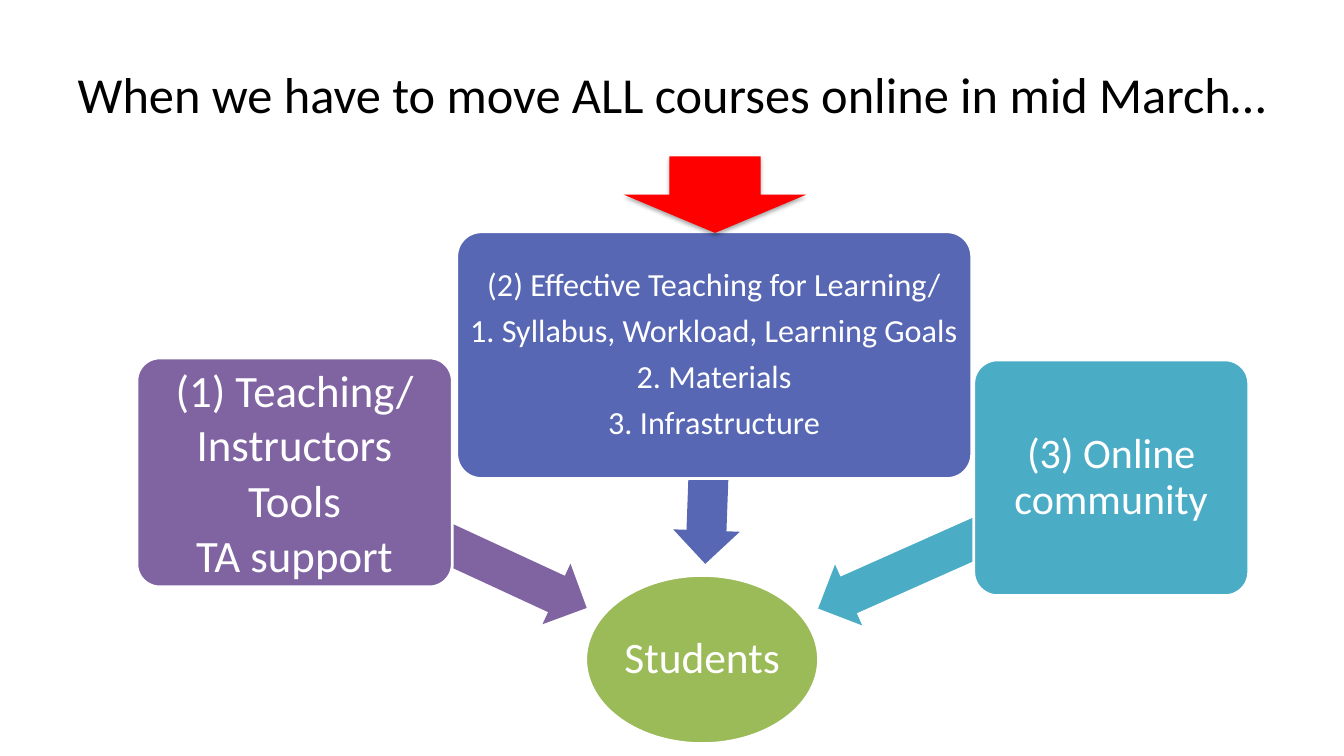
from pptx import Presentation
from pptx.dml.color import RGBColor
from pptx.enum.shapes import MSO_SHAPE as SHAPE
from pptx.enum.text import MSO_ANCHOR, PP_ALIGN
from pptx.util import Cm, Pt

BLACK = RGBColor(0x00, 0x00, 0x00)
WHITE = RGBColor(0xFF, 0xFF, 0xFF)
RED = RGBColor(0xFF, 0x00, 0x00)
GREEN = RGBColor(0x9B, 0xBB, 0x59)
PURPLE = RGBColor(0x80, 0x64, 0xA2)
BLUE = RGBColor(0x57, 0x67, 0xB4)
TEAL = RGBColor(0x4B, 0xAC, 0xC6)
FONT = "Calibri"

TITLE = "When we have to move ALL courses online in mid March…"
TITLE_BOX = (1.7, 0.76, 30.48, 3.18)
PRESSURE_BOX = (15.72, 3.94, 4.6, 1.93)
STUDENTS = dict(lines=["Students"], box=(14.76, 14.5, 5.87, 4.24),
                color=GREEN, size=31, inset=0.05)

# Each factor sits on top of the arrow that leads from it to the students
FACTORS = [
    dict(lines=["(1) Teaching/ Instructors", "Tools", "TA support"],
         box=(3.45, 9.02, 7.95, 5.77), color=PURPLE, size=32, inset=0.18,
         spacing=1.0, after=1.4, arrow=(7.06, 12.78, 8.1), angle=204.8),
    dict(lines=["(2) Effective Teaching for Learning/",
                "1. Syllabus, Workload, Learning Goals",
                "2. Materials", "3. Infrastructure"],
         box=(11.51, 5.84, 12.98, 6.22), color=BLUE, size=23, inset=0.13,
         arrow=(15.24, 10.74, 5.26), angle=272.1),
    dict(lines=["(3) Online community"],
         box=(24.54, 9.07, 6.93, 5.94), color=TEAL, size=30, inset=0.15,
         arrow=(20.27, 12.85, 8.08), angle=336),
]
ARROW_HEIGHT = 1.68


def add_filled(slide, kind, box, color):
    s = slide.shapes.add_shape(kind, *map(Cm, box))
    s.fill.solid()
    s.fill.fore_color.rgb = color
    s.line.fill.background()
    return s


def add_node(slide, kind, lines, box, color, size, inset, spacing=0.9, after=None):
    """Add a white-edged shape with centred text; after defaults to 35% of size."""
    s = add_filled(slide, kind, box, color)
    s.shadow.inherit = False
    s.line.color.rgb = WHITE
    s.line.width = Pt(2)
    tf = s.text_frame
    tf.word_wrap = True
    tf.vertical_anchor = MSO_ANCHOR.MIDDLE
    tf.margin_left = tf.margin_right = tf.margin_top = tf.margin_bottom = Cm(inset)
    for i, line in enumerate(lines):
        p = tf.add_paragraph() if i else tf.paragraphs[0]
        p.text = line
        p.line_spacing = spacing
        p.space_after = Pt(round(size * 0.35, 1) if after is None else after)
        style(p, size, WHITE)
    return s


def style(p, size, color):
    p.alignment = PP_ALIGN.CENTER
    p.font.name = FONT
    p.font.size = Pt(size)
    p.font.color.rgb = color


def main():
    prs = Presentation()
    prs.slide_width, prs.slide_height = Cm(33.87), Cm(19.05)
    slide = prs.slides.add_slide(prs.slide_layouts[5])

    title = slide.shapes.title
    title.left, title.top, title.width, title.height = map(Cm, TITLE_BOX)
    tf = title.text_frame
    tf.text = TITLE
    tf.vertical_anchor = MSO_ANCHOR.MIDDLE
    tf.margin_left = tf.margin_right = Cm(0)
    style(tf.paragraphs[0], 36, BLACK)

    add_node(slide, SHAPE.OVAL, **STUDENTS)
    for factor in FACTORS:
        node = dict(factor)
        arrow_box = (*node.pop("arrow"), ARROW_HEIGHT)
        arrow = add_filled(slide, SHAPE.LEFT_ARROW, arrow_box, node["color"])
        arrow.shadow.inherit = False
        arrow.adjustments[0] = 0.6
        arrow.rotation = node.pop("angle")
        s = add_node(slide, SHAPE.ROUNDED_RECTANGLE, **node)
        s.adjustments[0] = 0.1

    # The red arrow keeps the theme's soft shadow
    add_filled(slide, SHAPE.DOWN_ARROW, PRESSURE_BOX, RED)
    prs.save("out.pptx")


if __name__ == "__main__":
    main()
